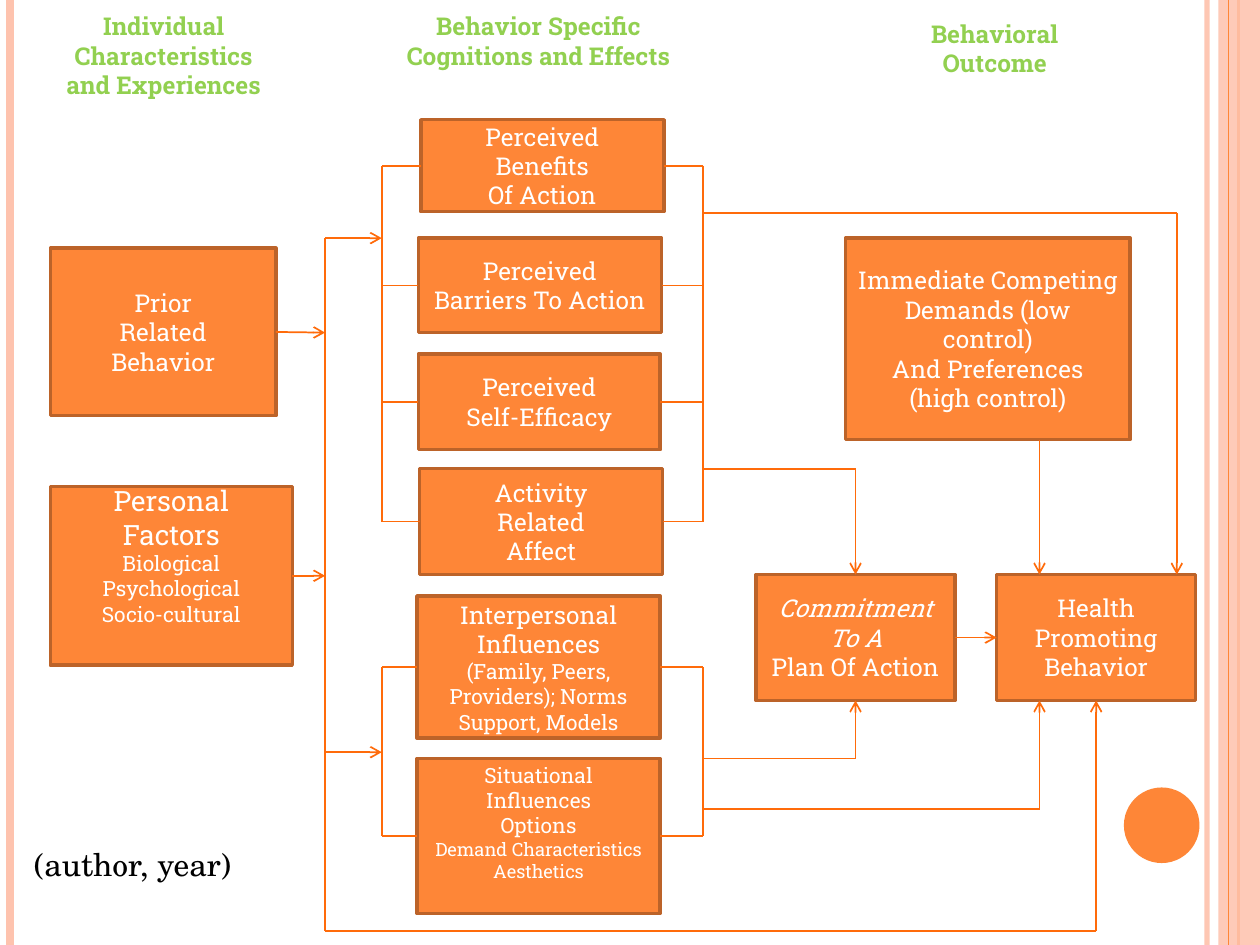
from lxml import etree
from pptx import Presentation
from pptx import util as u
from pptx.dml.color import RGBColor
from pptx.enum import shapes, text
from pptx.oxml.ns import qn

THEME = {
    "orange": "FE8637", "border": "BC6329", "line": "FF6B0A", "peach": "FEC3AE",
    "heading": "92D050", "white": "FFFFFF", "black": "000000",
    "font": "Roboto Slab", "note_font": "TeX Gyre Schola",
    "large": 16, "body": 14, "small": 12, "tiny": 10.5, "note": 18,
}
TOP, LEFT, BOTTOM, RIGHT = range(4)

STRIPES = [(9.58, "peach", 3, 93), (0.08, "peach", 4.5, 100), (9.83, "orange", 1.5, 100)]
INNER_STRIPE = (9.75, "orange", 0.75, 100)
BAND = (9.67, 0, 0.33, 7.5)
DOT = (8.92, 6.25, 0.6, 0.6)

HEADINGS = [
    ((0.4, 0.04, 1.8, 1.28), ["Individual", "Characteristics and Experiences"]),
    ((3.11, 0.04, 2.33, 0.98), ["Behavior Specific Cognitions and Effects"]),
    ((7.23, 0.1, 1.33, 0.57), ["Behavioral Outcome"]),
]
NOTE = ((0.17, 6.66, 2.29, 0.4), ["(author, year)"])

BOXES = {
    "prior": ((0.4, 1.97, 1.79, 1.33), {"body": ["Prior", "Related", "Behavior"]}),
    "personal": ((0.4, 3.86, 1.92, 1.42), {
        "large": ["Personal", "Factors"],
        "small": ["Biological", "Psychological", "Socio-cultural"]}),
    "benefits": ((3.34, 0.95, 1.93, 0.73), {"body": ["Perceived", "Benefits", "Of Action"]}),
    "barriers": ((3.32, 1.89, 1.93, 0.75), {"body": ["Perceived", "Barriers To Action"]}),
    "efficacy": ((3.32, 2.81, 1.92, 0.76), {"body": ["Perceived", "Self-Efficacy"]}),
    "affect": ((3.33, 3.72, 1.93, 0.84), {"body": ["Activity", "Related", "Affect"]}),
    "demands": ((6.71, 1.89, 2.26, 1.6), {"body": [
        "Immediate Competing Demands (low control)", "And Preferences", "(high control)"]}),
    "commitment": ((6, 4.56, 1.58, 1), {"body": ["Commitment", "To A", "Plan Of Action"]}),
    "health": ((7.91, 4.56, 1.58, 1), {"body": ["Health Promoting", "Behavior"]}),
    "interpersonal": ((3.31, 4.73, 1.93, 1.13), {
        "body": ["Interpersonal Influences"],
        "small": ["(Family, Peers, Providers); Norms", "Support, Models"]}),
    "situational": ((3.31, 6.02, 1.93, 1.23), {
        "small": ["Situational", "Influences", "Options"],
        "tiny": ["Demand Characteristics Aesthetics"]}),
}
ITALIC_LINES = {"Commitment", "To A"}
BOTTOM_INSETS = {"personal": 0.38, "situational": 0.27}

TRUNK, LEFT_BUS, RIGHT_BUS = 2.58, 3.03, 5.58
TRUNK_TOP, TRUNK_BOTTOM = 1.89, 7.39
HEALTH_TOP, HEALTH_BOTTOM = 4.56, 5.56
GROUPS = [["benefits", "barriers", "efficacy", "affect"], ["interpersonal", "situational"]]
ROUTES = [
    [(TRUNK, TRUNK_TOP), (LEFT_BUS, TRUNK_TOP)],
    [(TRUNK, 5.97), (LEFT_BUS, 5.97)],
    [("prior", RIGHT), (TRUNK, 2.64)],
    [("personal", RIGHT), (TRUNK, 4.57)],
    [(TRUNK, TRUNK_TOP), (TRUNK, TRUNK_BOTTOM), (8.7, TRUNK_BOTTOM), (8.7, HEALTH_BOTTOM)],
    [(RIGHT_BUS, 6.02), (6.79, 6.02), ("commitment", BOTTOM)],
    [(RIGHT_BUS, 6.42), (8.25, 6.42), (8.25, HEALTH_BOTTOM)],
    [("commitment", RIGHT), ("health", LEFT)],
    [(RIGHT_BUS, 3.72), (6.79, 3.72), ("commitment", TOP)],
    [(8.25, 3.49), (8.25, HEALTH_TOP)],
    [(RIGHT_BUS, 1.69), (9.34, 1.69), (9.34, HEALTH_TOP)],
]

presentation = Presentation()
presentation.slide_width, presentation.slide_height = u.Inches(10), u.Inches(7.5)
slide = presentation.slides.add_slide(presentation.slide_layouts[6])
box_shapes = {}


def color(name):
    return RGBColor.from_string(THEME[name])


def apply(target, values):
    for name, value in values.items():
        setattr(target, name, value)


def set_alpha(fill_parent, percent):
    swatch = fill_parent.find(qn("a:solidFill"))[0]
    etree.SubElement(swatch, qn("a:alpha")).set("val", str(percent * 1000))


def add_preset(preset, frame, fill, border=None):
    shape = slide.shapes.add_shape(preset, *map(u.Inches, frame))
    shape.shadow.inherit = False
    shape.fill.solid()
    shape.fill.fore_color.rgb = color(fill)
    if border:
        shape.line.color.rgb = color(border)
        shape.line.width = u.Pt(2)
    else:
        shape.line.fill.background()
    return shape


def write(frame, lines, tint, font="font", bold=False, align=text.PP_ALIGN.CENTER):
    frame.word_wrap = True
    for index, (words, size) in enumerate(lines):
        paragraph = frame.paragraphs[0] if index == 0 else frame.add_paragraph()
        paragraph.alignment = align
        run = paragraph.add_run()
        run.text = words
        run.font.color.rgb = color(tint)
        apply(run.font, {"name": THEME[font], "size": u.Pt(THEME[size]),
                         "bold": bold, "italic": words in ITALIC_LINES})


def add_text(frame, lines, size, tint, **style):
    box = slide.shapes.add_textbox(*map(u.Inches, frame))
    write(box.text_frame, [(words, size) for words in lines], tint, **style)


def locate(end):
    if not isinstance(end[0], str):
        return end
    left, top, width, height = BOXES[end[0]][0]
    across, down = {TOP: (0.5, 0), LEFT: (0, 0.5), BOTTOM: (0.5, 1), RIGHT: (1, 0.5)}[end[1]]
    return left + across * width, top + down * height


def add_line(start, end, arrow=False, tint="line", width=1, alpha=100):
    points = map(u.Inches, (*locate(start), *locate(end)))
    connector = slide.shapes.add_connector(shapes.MSO_CONNECTOR.STRAIGHT, *points)
    connector.line.color.rgb = color(tint)
    connector.line.width = u.Pt(width)
    line = connector.line._get_or_add_ln()
    if alpha < 100:
        set_alpha(line, alpha)
    if arrow:
        etree.SubElement(line, qn("a:tailEnd")).set("type", "arrow")
    etree.SubElement(connector._element.spPr, qn("a:effectLst"))
    for point, join in ((start, connector.begin_connect), (end, connector.end_connect)):
        if isinstance(point[0], str):
            join(box_shapes[point[0]], point[1])


def add_stripe(x, tint, width, alpha):
    add_line((x, 0), (x, 7.5), tint=tint, width=width, alpha=alpha)


for stripe in STRIPES:
    add_stripe(*stripe)
band = add_preset(shapes.MSO_SHAPE.RECTANGLE, BAND, "peach")
set_alpha(band._element.spPr, 87)
add_stripe(*INNER_STRIPE)
add_preset(shapes.MSO_SHAPE.OVAL, DOT, "orange")

for name, (frame, content) in BOXES.items():
    box = add_preset(shapes.MSO_SHAPE.RECTANGLE, frame, "orange", "border")
    apply(box.text_frame, {"vertical_anchor": text.MSO_ANCHOR.MIDDLE,
                           "margin_bottom": u.Inches(BOTTOM_INSETS.get(name, 0.05))})
    write(box.text_frame, [(words, size) for size, lines in content.items() for words in lines],
          "white")
    box_shapes[name] = box

for frame, lines in HEADINGS:
    add_text(frame, lines, "body", "heading", bold=True)
add_text(*NOTE, "note", "black", font="note_font", align=text.PP_ALIGN.LEFT)

for group in GROUPS:
    for bus, side in ((LEFT_BUS, LEFT), (RIGHT_BUS, RIGHT)):
        rows = [locate((name, side))[1] for name in group]
        for name, row in zip(group, rows):
            add_line((name, side), (bus, row))
        add_line((bus, rows[0]), (bus, rows[-1]))

for route in ROUTES:
    for index, (start, end) in enumerate(zip(route, route[1:]), 2):
        add_line(start, end, arrow=index == len(route))

presentation.save("out.pptx")
